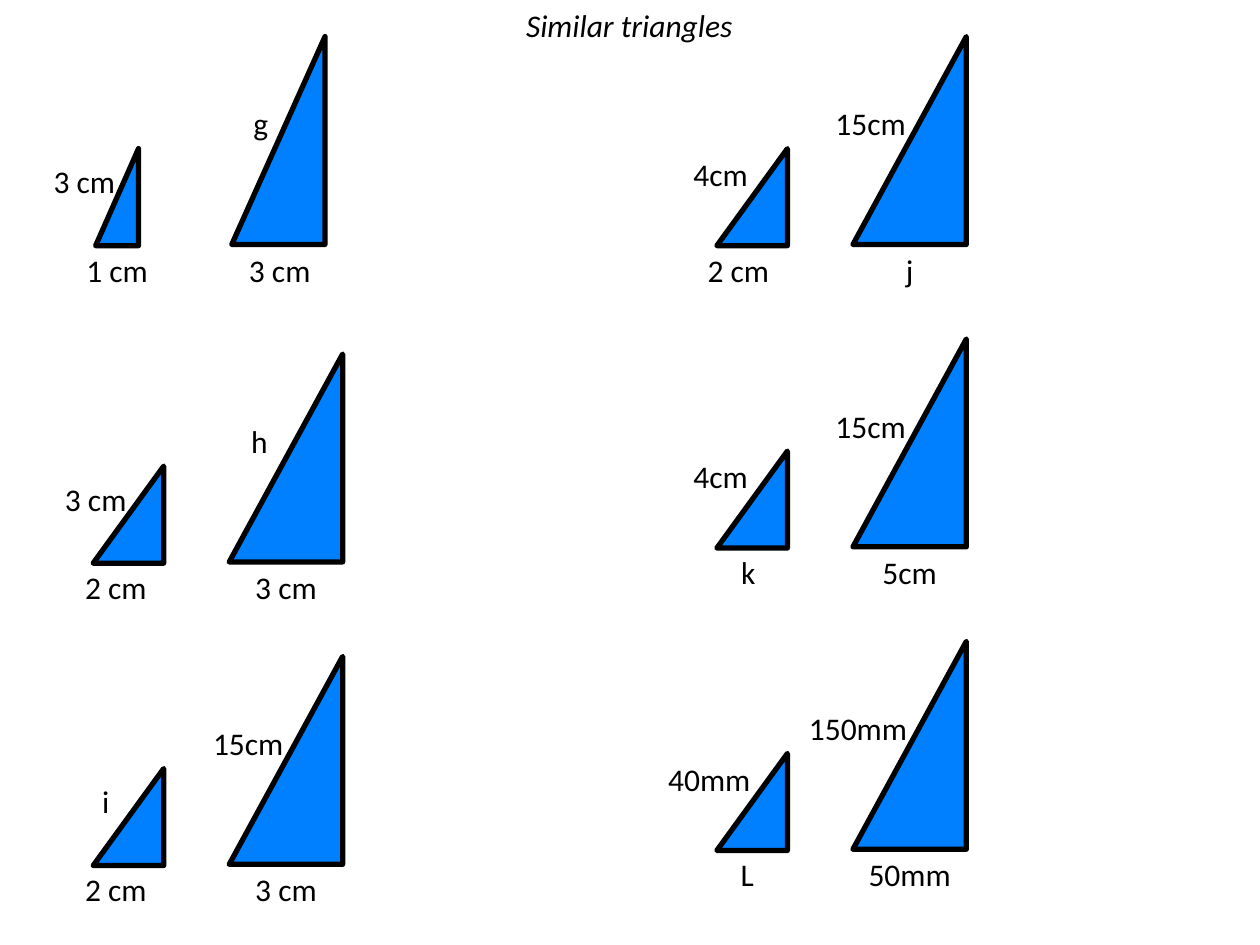
from dataclasses import dataclass

from pptx import Presentation
from pptx import util as u
from pptx.dml.color import RGBColor
from pptx.enum import shapes, text
from pptx.oxml.ns import qn

PX = 9144  # 100 px to the inch
BLUE, BLACK = "007FFF", "000000"

# Vertical places, measured from the top of a pair's large triangle
SMALL_TOP, SMALL_HEIGHT, LARGE_HEIGHT = 89, 77, 165
BASE_LABEL_TOP, LARGE_SIDE_TOP = 165, 49
LARGE_LEFT = 108  # from the left of the small triangle
LABEL_HEIGHT = 40


@dataclass
class Label:
    """A length, placed from the left of its pair."""
    wording: str
    dx: int
    width: int = 76


@dataclass
class Pair:
    left: int
    top: int
    small_base: Label
    small_side: Label
    large_base: Label
    large_side: Label
    small_side_top: int = 95
    small_width: int = 56
    large_width: int = 90


PAIRS = [
    Pair(76, 29, Label("1 cm", -21), Label("3 cm", -47), Label("3 cm", 108), Label("g", 93),
         small_width=34, large_width=74),
    Pair(74, 281, Label("2 cm", -20), Label("3 cm", -36), Label("3 cm", 115), Label("h", 94)),
    Pair(74, 521, Label("2 cm", -20), Label("i", -28), Label("3 cm", 115),
         Label("15cm", 76, 94)),
    Pair(569, 29, Label("2 cm", -21), Label("4cm", -35), Label("j", 115),
         Label("15cm", 75, 94), small_side_top=89),
    Pair(569, 269, Label("k", -13), Label("4cm", -35), Label("5cm", 115),
         Label("15cm", 75, 94), small_side_top=89),
    Pair(569, 509, Label("L", -14), Label("40mm", -53, 94), Label("50mm", 108, 90),
         Label("150mm", 55, 114), small_side_top=89),
]


def px(*lengths: int) -> list[int]:
    return [length * PX for length in lengths]


def colour(hex_code: str) -> RGBColor:
    return RGBColor.from_string(hex_code)


def add_text(slide, wording: str, left: int, top: int, width: int, italic: bool = False) -> None:
    frame = slide.shapes.add_textbox(*px(left, top, width, LABEL_HEIGHT)).text_frame
    frame.word_wrap = True
    frame.auto_size = text.MSO_AUTO_SIZE.SHAPE_TO_FIT_TEXT
    frame.text = wording
    paragraph = frame.paragraphs[0]
    paragraph.alignment = text.PP_ALIGN.CENTER
    font = paragraph.runs[0].font
    font.name, font.size = "Calibri", u.Pt(18)
    font.color.rgb = colour(BLACK)
    if italic:
        font.italic = True


def add_triangle(slide, left: int, top: int, width: int, height: int) -> None:
    """Draw a right triangle with its right angle at the lower right."""
    triangle = slide.shapes.add_shape(
        shapes.MSO_SHAPE.RIGHT_TRIANGLE, *px(left, top, width, height))
    triangle._element.spPr.find(qn("a:xfrm")).set("flipH", "1")
    triangle.shadow.inherit = False
    triangle.fill.solid()
    triangle.fill.fore_color.rgb = colour(BLUE)
    triangle.line.color.rgb = colour(BLACK)
    triangle.line.width = u.Pt(3)


def add_pair(slide, pair: Pair) -> None:
    for label, label_top in (
        (pair.small_base, BASE_LABEL_TOP),
        (pair.small_side, pair.small_side_top),
        (pair.large_base, BASE_LABEL_TOP),
        (pair.large_side, LARGE_SIDE_TOP),
    ):
        add_text(slide, label.wording, pair.left + label.dx, pair.top + label_top, label.width)
    add_triangle(slide, pair.left, pair.top + SMALL_TOP, pair.small_width, SMALL_HEIGHT)
    add_triangle(slide, pair.left + LARGE_LEFT, pair.top, pair.large_width, LARGE_HEIGHT)


def main() -> None:
    deck = Presentation()
    deck.slide_width, deck.slide_height = px(1000, 750)
    slide = deck.slides.add_slide(deck.slide_layouts[6])
    for pair in PAIRS:
        add_pair(slide, pair)
    add_text(slide, "Similar triangles", 390, 0, 219, italic=True)
    deck.save("out.pptx")


if __name__ == "__main__":
    main()
